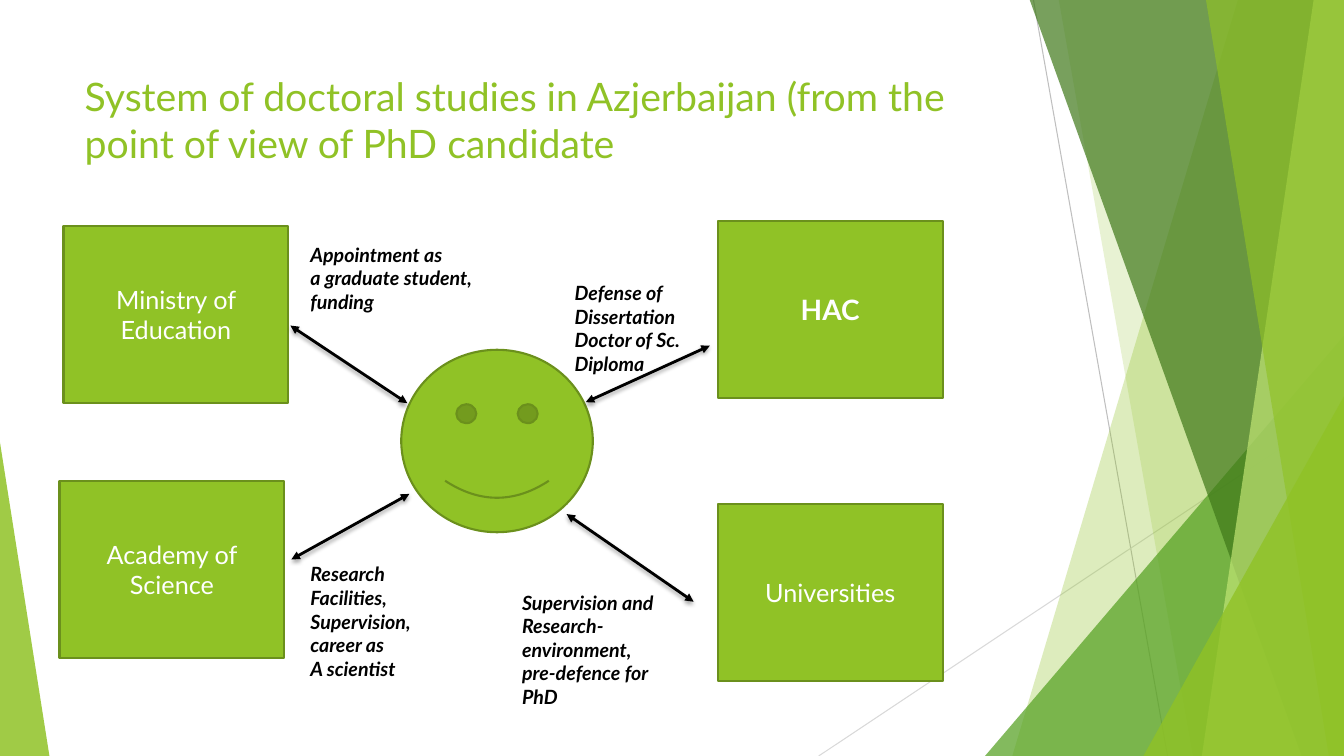
from lxml import etree
from pptx import Presentation
from pptx.dml.color import RGBColor
from pptx.enum.shapes import MSO_CONNECTOR, MSO_SHAPE
from pptx.enum.text import MSO_ANCHOR, MSO_AUTO_SIZE, PP_ALIGN
from pptx.oxml.ns import qn
from pptx.util import Inches, Pt

STRAIGHT = MSO_CONNECTOR.STRAIGHT
RECTANGLE, SMILEY, TRIANGLE = MSO_SHAPE.RECTANGLE, MSO_SHAPE.SMILEY_FACE, MSO_SHAPE.ISOSCELES_TRIANGLE
LEFT, CENTER = PP_ALIGN.LEFT, PP_ALIGN.CENTER
TOP, MIDDLE = MSO_ANCHOR.TOP, MSO_ANCHOR.MIDDLE
FIT_SHAPE, NO_FIT = MSO_AUTO_SIZE.SHAPE_TO_FIT_TEXT, MSO_AUTO_SIZE.NONE

WIDTH, HEIGHT = 13.33, 7.5
BAND_TOP = -0.01
GREEN, DARK_GREEN, BLACK, WHITE = "90C226", "6B901C", "000000", "FFFFFF"
FONT = "Lato"

TITLE = "System of doctoral studies in Azjerbaijan (from the point of view of PhD candidate"
TITLE_FRAME = {"vertical_anchor": TOP, "word_wrap": True, "auto_size": NO_FIT}
BOX_FRAME = {"vertical_anchor": MIDDLE, "word_wrap": True}
NOTE_FRAME = {"vertical_anchor": TOP, "word_wrap": False, "auto_size": FIT_SHAPE}
TITLE_FONT = {"name": FONT, "size": Pt(28)}
BOX_FONT = {"name": FONT, "size": Pt(18)}
HAC_FONT = {"name": FONT, "size": Pt(20), "bold": True}
NOTE_FONT = {"name": FONT, "size": Pt(14), "bold": True, "italic": True}

GUIDE_LINES = [
    ((10.25, 0), (11.58, HEIGHT), "BFBFBF"),
    ((WIDTH, 4.03), (8.12, HEIGHT), "D9D9D9"),
]
BACK_BANDS = [(12.28, 10.04, GREEN, 30), (10.5, 11.83, GREEN, 20)]
FRONT_BANDS = [
    (10.21, 12.91, "3F7819", 70),
    (13.03, 11.92, "C0E474", 70),
    (11.96, 13.18, GREEN, 65),
]
INSTITUTIONS = [
    ("Ministry of Education", 0.63, 2.24, BOX_FONT),
    ("Academy of Science", 0.59, 4.77, BOX_FONT),
    ("HAC", 7.12, 2.19, HAC_FONT),
    ("Universities", 7.12, 5, BOX_FONT),
]
RELATIONS = [
    ((2.88, 3.23), (4.04, 4), (2.98, 2.36, 2.06, 0.81),
     "Appointment as\na graduate student,\nfunding"),
    ((7.04, 3.43), (5.81, 3.99), (5.6, 2.74, 1.4, 1.04),
     "Defense of\nDissertation\nDoctor of Sc.\nDiploma"),
    ((5.62, 5.1), (6.88, 5.97), (5.08, 5.81, 1.73, 1.28),
     "Supervision and\nResearch-\nenvironment,\npre-defence for\nPhD"),
    ((4.06, 4.9), (2.89, 5.55), (2.98, 5.53, 1.34, 1.28),
     "Research\nFacilities,\nSupervision,\ncareer as\nA scientist"),
]


def rgb(color):
    """Turn a hex string into a colour."""
    return RGBColor.from_string(color)


def apply_format(target, values):
    """Set every attribute in values on target."""
    for key, value in values.items():
        setattr(target, key, value)


def write_text(shape, text, frame_format, font_format, color, align):
    """Fill a shape with formatted text, one paragraph per line."""
    frame = shape.text_frame
    frame.text = text
    apply_format(frame, frame_format)
    for paragraph in frame.paragraphs:
        paragraph.alignment = align
        for run in paragraph.runs:
            apply_format(run.font, font_format)
            run.font.color.rgb = rgb(color)


def set_fill(shape, color, opacity=100):
    """Give a shape a solid fill with an opacity in percent and no shadow."""
    shape.shadow.inherit = False
    shape.fill.solid()
    shape.fill.fore_color.rgb = rgb(color)
    if opacity < 100:
        color_node = shape._element.spPr.find(qn("a:solidFill"))[0]
        etree.SubElement(color_node, qn("a:alpha"), val=str(opacity * 1000))


def add_band(slide, top_left, bottom_left, color, opacity):
    """Draw a translucent band that reaches the right edge."""
    corners = [(WIDTH, BAND_TOP), (WIDTH, HEIGHT), (bottom_left, HEIGHT)]
    builder = slide.shapes.build_freeform(Inches(top_left), Inches(BAND_TOP))
    builder.add_line_segments([(Inches(x), Inches(y)) for x, y in corners])
    band = builder.convert_to_shape()
    set_fill(band, color, opacity)
    band.line.fill.background()


def add_corner(slide, left, top, width, peak, color, opacity):
    """Draw a translucent triangle that stands on the bottom edge."""
    box = map(Inches, (left, top, width, HEIGHT - top))
    corner = slide.shapes.add_shape(TRIANGLE, *box)
    corner.adjustments[0] = peak
    set_fill(corner, color, opacity)
    corner.line.fill.background()


def add_line(slide, start, end, color, weight):
    """Draw a straight line and return it with its empty effect list."""
    line = slide.shapes.add_connector(STRAIGHT, *map(Inches, start + end))
    line.line.color.rgb = rgb(color)
    line.line.width = Pt(weight)
    effects = etree.SubElement(line._element.spPr, qn("a:effectLst"))
    return line, effects


def add_double_arrow(slide, start, end):
    """Draw a shadowed line with an arrowhead at both ends."""
    arrow, effects = add_line(slide, start, end, BLACK, 2)
    stroke = arrow._element.spPr.find(qn("a:ln"))
    for tip in ("a:headEnd", "a:tailEnd"):
        etree.SubElement(stroke, qn(tip), type="triangle")
    shadow = etree.SubElement(
        effects, qn("a:outerShdw"), blurRad=str(Pt(3)), dist=str(Pt(2)),
        dir="5400000", rotWithShape="0")
    shadow_color = etree.SubElement(shadow, qn("a:srgbClr"), val=BLACK)
    etree.SubElement(shadow_color, qn("a:alpha"), val="35000")


def add_outlined(slide, kind, left, top, width, height):
    """Draw a green shape with a dark green outline."""
    shape = slide.shapes.add_shape(kind, *map(Inches, (left, top, width, height)))
    set_fill(shape, GREEN)
    shape.line.color.rgb = rgb(DARK_GREEN)
    shape.line.width = Pt(1.5)
    return shape


def add_decoration(slide):
    """Draw the green facets at both sides of the slide."""
    for start, end, color in GUIDE_LINES:
        add_line(slide, start, end, color, 0.75)
    for band in BACK_BANDS:
        add_band(slide, *band)
    add_corner(slide, 9.77, 3.33, 3.56, 1, "54A021", 72)
    for band in FRONT_BANDS:
        add_band(slide, *band)
    add_corner(slide, 11.34, 3.93, 1.99, 1, GREEN, 80)
    add_corner(slide, 0, 4.39, 0.49, 0, GREEN, 85)


def add_title(slide):
    """Place and format the title."""
    title = slide.shapes.title
    box = zip(("left", "top", "width", "height"), map(Inches, (0.74, 0.67, 9.31, 1.04)))
    apply_format(title, dict(box))
    write_text(title, TITLE, TITLE_FRAME, TITLE_FONT, GREEN, LEFT)


def main():
    """Build the slide and save it."""
    deck = Presentation()
    deck.slide_width, deck.slide_height = Inches(WIDTH), Inches(HEIGHT)
    slide = deck.slides.add_slide(deck.slide_layouts[5])
    add_decoration(slide)
    add_title(slide)
    for name, left, top, font_format in INSTITUTIONS:
        institution = add_outlined(slide, RECTANGLE, left, top, 2.23, 1.76)
        write_text(institution, name, BOX_FRAME, font_format, WHITE, CENTER)
    add_outlined(slide, SMILEY, 3.98, 3.47, 1.9, 1.81)
    for start, end, note_box, text in RELATIONS:
        add_double_arrow(slide, start, end)
        note = slide.shapes.add_textbox(*map(Inches, note_box))
        write_text(note, text, NOTE_FRAME, NOTE_FONT, BLACK, LEFT)
    deck.save("out.pptx")


if __name__ == "__main__":
    main()
